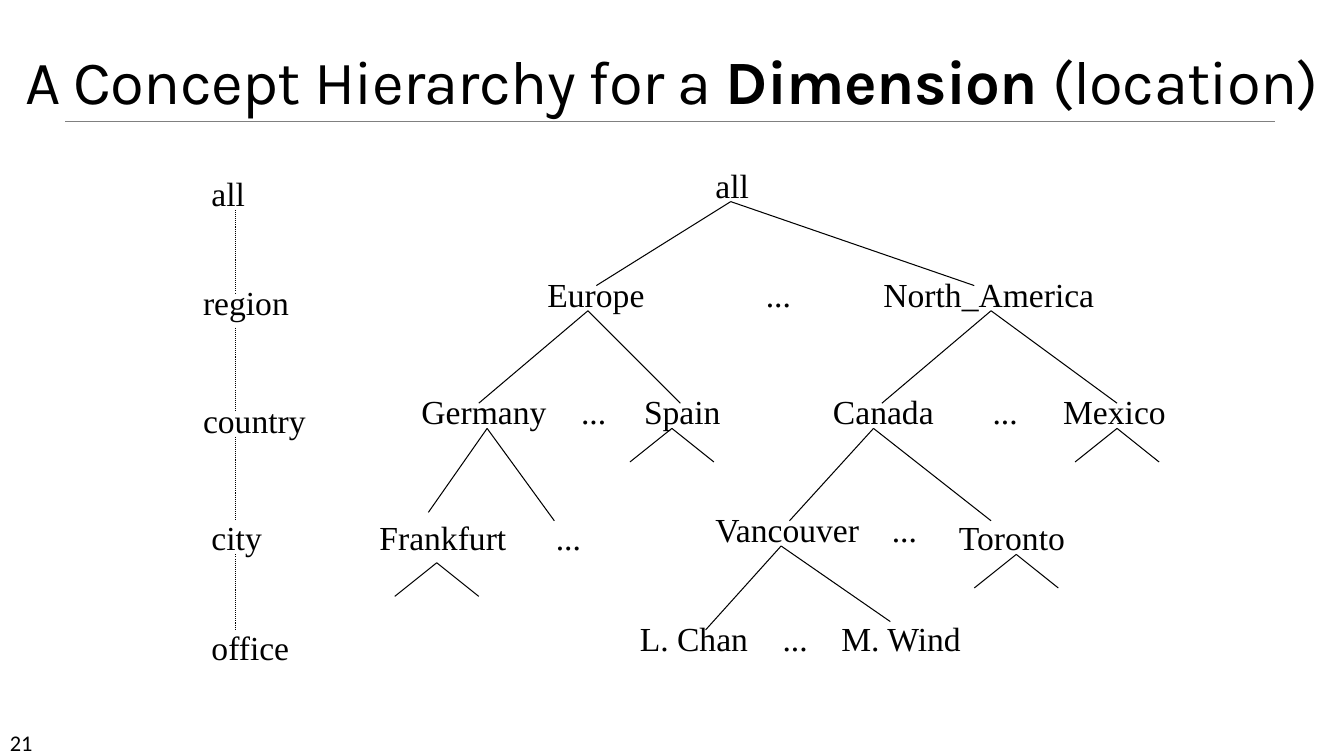
from dataclasses import dataclass

from pptx import Presentation
from pptx import util as u
from pptx.dml.color import RGBColor
from pptx.enum import dml, shapes, text
from pptx.oxml.ns import qn

BLACK = RGBColor(0x00, 0x00, 0x00)
GREY = RGBColor(0x80, 0x80, 0x80)
GRID_CM = 2.54 / 12  # the diagram sits on a grid of twelfths of an inch


@dataclass(frozen=True)
class Label:
    """Words with their place in grid steps and box width in centimetres."""
    words: str
    left: float
    top: float
    width: float


@dataclass(frozen=True)
class Fork:
    """Two branches going down from one apex, in grid steps."""
    apex: tuple[float, float]
    left: tuple[float, float]
    right: tuple[float, float]


LEVELS = [
    Label("all", 24, 20, 1.35),
    Label("region", 23, 33, 2.67),
    Label("country", 23, 47, 3.1),
    Label("city", 24, 61, 1.78),
    Label("office", 24, 74, 2.49),
]
LEVEL_X = 28
LEVEL_LINKS = [(25, 35), (39, 49), (52, 62), (66, 75)]

NODES = [
    Label("all", 84, 19, 1.35),
    Label("Europe", 64, 32, 2.95),
    Label("North_America", 104, 32, 5.82),
    Label("Germany", 49, 46, 3.66),
    Label("Spain", 75.5, 46, 2.44),
    Label("Canada", 98, 46, 3.05),
    Label("Mexico", 125.4, 46, 3.1),
    Label("Frankfurt", 44, 61, 3.71),
    Label("Vancouver", 84, 60, 4.22),
    Label("Toronto", 113, 61, 3.23),
    Label("L. Chan", 75, 73, 3.23),
    Label("M. Wind", 99, 73, 3.56),
]
ELLIPSIS_PLACES = [(90, 32), (68, 46), (117, 46), (65, 61), (105, 60), (92, 73)]
ELLIPSES = [Label("...", left, top, 1.14) for left, top in ELLIPSIS_PLACES]

FORKS = [
    Fork((87, 24), (71, 34), (116, 34)),
    Fork((70, 37), (57, 48), (81, 48)),
    Fork((118, 37), (105, 48), (133, 48)),
    Fork((58, 51), (51, 61), (66, 62)),
    Fork((104, 51), (94, 62), (118, 62)),
    Fork((93, 65), (84, 75), (106, 74)),
]
STUB_APEXES = [(80, 51), (133, 51), (52, 67), (121, 66)]
STUBS = [Fork((x, y), (x - 5, y + 4), (x + 5, y + 4)) for x, y in STUB_APEXES]


def grid(steps: float) -> u.Length:
    return u.Cm(steps * GRID_CM)


def add_text(page, spans, left, top, width, height, *, font, size, wrap=True,
             anchor=text.MSO_ANCHOR.TOP, align=text.PP_ALIGN.LEFT,
             line_spacing=None, tracking=None):
    """Add a text box; spans are (words, bold) pairs, tracking is in points."""
    box = page.shapes.add_textbox(left, top, width, height)
    frame = box.text_frame
    frame.word_wrap = wrap
    frame.vertical_anchor = anchor
    frame.auto_size = text.MSO_AUTO_SIZE.NONE if wrap else text.MSO_AUTO_SIZE.SHAPE_TO_FIT_TEXT
    para = frame.paragraphs[0]
    para.alignment = align
    para.line_spacing = line_spacing
    for words, bold in spans:
        span = para.add_run()
        span.text = words
        span.font.name = font
        span.font.size = u.Pt(size)
        span.font.bold = bold
        span.font.color.rgb = BLACK
        if tracking is not None:
            span.font._element.set("spc", str(round(tracking * 100)))


def add_line(page, start, end, *, color=BLACK, weight=0.75, dash=None) -> None:
    """Add a straight line between two points given as lengths."""
    line = page.shapes.add_connector(shapes.MSO_CONNECTOR.STRAIGHT, *start, *end)
    line.line.color.rgb = color
    line.line.width = u.Pt(weight)
    if dash is not None:
        line.line.dash_style = dash
    properties = line._element.spPr
    properties.append(properties.makeelement(qn("a:effectLst"), {}))


def add_label(page, label: Label) -> None:
    add_text(page, [(label.words, False)], grid(label.left), grid(label.top),
             u.Cm(label.width), grid(6), font="Times New Roman", size=24, wrap=False)


def add_fork(page, fork: Fork) -> None:
    for tip in (fork.left, fork.right):
        add_line(page, [grid(step) for step in fork.apex], [grid(step) for step in tip])


def main() -> None:
    deck = Presentation()
    deck.slide_width, deck.slide_height = u.Cm(33.87), u.Cm(19.05)
    page = deck.slides.add_slide(deck.slide_layouts[6])

    add_line(page, (u.Cm(1.65), u.Cm(3.05)), (u.Cm(32.13), u.Cm(3.05)),
             color=GREY, weight=0.5)
    add_text(page, [("21", False)], 0, u.Cm(18.24), u.Cm(2.97), u.Cm(0.76),
             font="Calibri", size=16)
    title = [("A Concept Hierarchy for a ", False), ("Dimension", True),
             (" (location)", False)]
    add_text(page, title, 0, u.Cm(-0.2), deck.slide_width, u.Cm(3.28),
             font="Karla", size=44, anchor=text.MSO_ANCHOR.BOTTOM,
             align=text.PP_ALIGN.CENTER, line_spacing=0.85, tracking=-0.5)

    for label in LEVELS + NODES + ELLIPSES:
        add_label(page, label)
    for fork in FORKS + STUBS:
        add_fork(page, fork)
    for top, bottom in LEVEL_LINKS:
        add_line(page, (grid(LEVEL_X), grid(top)), (grid(LEVEL_X), grid(bottom)),
                 dash=dml.MSO_LINE.ROUND_DOT)

    deck.save("out.pptx")


if __name__ == "__main__":
    main()
